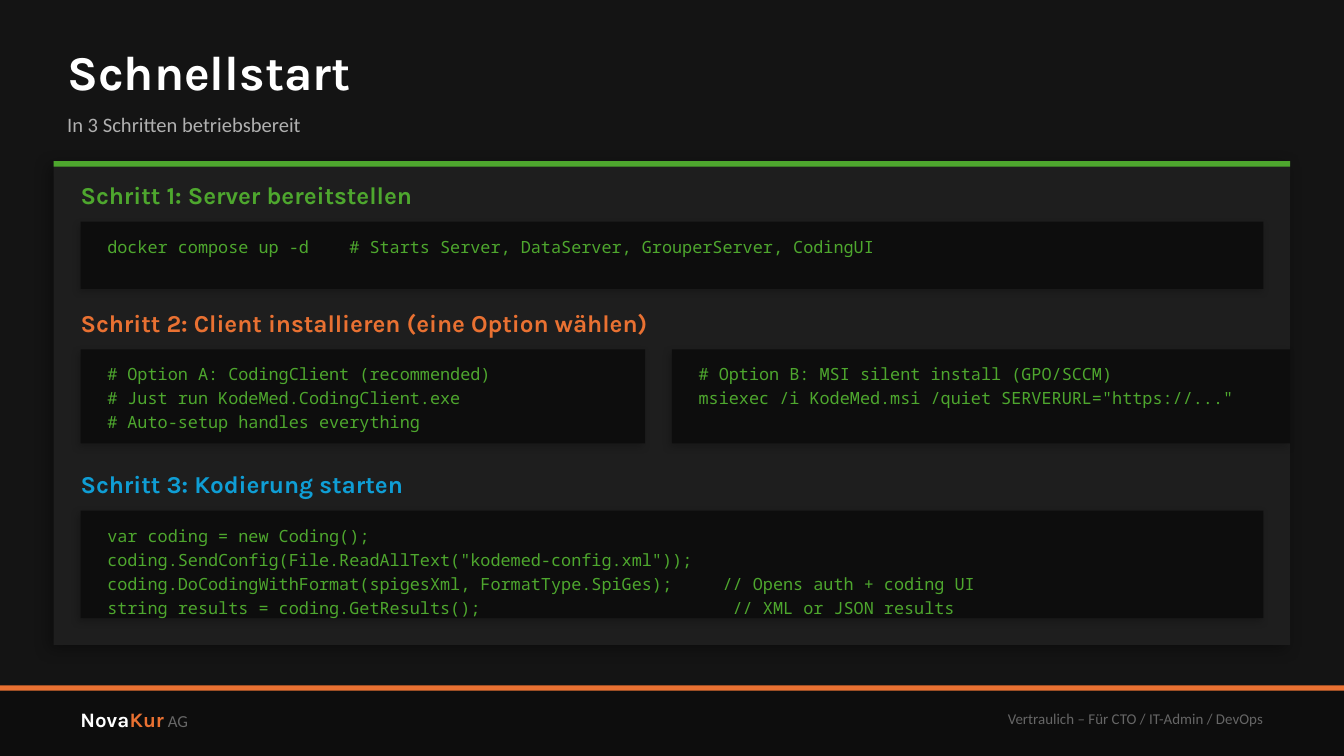
from lxml import etree
from pptx import Presentation
from pptx.dml.color import RGBColor
from pptx.enum import shapes, text
from pptx.oxml import ns
from pptx.util import Inches, Pt

BACKGROUND = RGBColor(0x14, 0x14, 0x14)
PANEL = RGBColor(0x1E, 0x1E, 0x1E)
DARK = RGBColor(0x0D, 0x0D, 0x0D)
WHITE = RGBColor(0xFF, 0xFF, 0xFF)
LIGHT_GRAY = RGBColor(0xB0, 0xB0, 0xB0)
GRAY = RGBColor(0x66, 0x66, 0x66)
BLACK = RGBColor(0x00, 0x00, 0x00)
GREEN = RGBColor(0x4E, 0xA7, 0x2E)
ORANGE = RGBColor(0xE9, 0x71, 0x32)
BLUE = RGBColor(0x0F, 0x9E, 0xD5)

HEADING_FONT = "Karla"
BODY_FONT = "Calibri"
CODE_FONT = "Noto Sans Mono"

STEPS = [
    (0.1, "Schritt 1: Server bereitstellen", GREEN, 0.5, [
        (0, 8.8, ["docker compose up -d    # Starts Server, DataServer, GrouperServer, CodingUI"]),
    ]),
    (1.05, "Schritt 2: Client installieren (eine Option wählen)", ORANGE, 0.7, [
        (0, 4.2, [
            "# Option A: CodingClient (recommended)",
            "# Just run KodeMed.CodingClient.exe",
            "# Auto-setup handles everything",
        ]),
        (4.4, 4.6, [
            "# Option B: MSI silent install (GPO/SCCM)",
            'msiexec /i KodeMed.msi /quiet SERVERURL="https://..."',
        ]),
    ]),
    (2.25, "Schritt 3: Kodierung starten", BLUE, 0.8, [
        (0, 8.8, [
            "var coding = new Coding();",
            'coding.SendConfig(File.ReadAllText("kodemed-config.xml"));',
            "coding.DoCodingWithFormat(spigesXml, FormatType.SpiGes);     // Opens auth + coding UI",
            "string results = coding.GetResults();                         // XML or JSON results",
        ]),
    ]),
]


def add_shadow(shape, opacity, blur, distance):
    """Give a shape a soft black shadow towards the lower left."""
    effects = shape._element.spPr.find(ns.qn("a:effectLst"))
    shadow = etree.SubElement(
        effects, ns.qn("a:outerShdw"), blurRad=str(Pt(blur)), dist=str(Pt(distance)),
        dir=str(135 * 60000), algn="bl", rotWithShape="0")
    color = etree.SubElement(shadow, ns.qn("a:srgbClr"), val=str(BLACK))
    etree.SubElement(color, ns.qn("a:alpha"), val=str(opacity * 1000))


def add_box(slide, left, top, width, height, color):
    """Add a plain filled rectangle."""
    shape = slide.shapes.add_shape(
        shapes.MSO_SHAPE.RECTANGLE, Inches(left), Inches(top), Inches(width), Inches(height))
    shape.shadow.inherit = False
    shape.fill.solid()
    shape.fill.fore_color.rgb = color
    shape.line.fill.background()
    return shape


def add_text(slide, left, top, width, height, lines, *, size=11, font=BODY_FONT,
             color=WHITE, bold=False, align=text.PP_ALIGN.LEFT,
             anchor=text.MSO_ANCHOR.MIDDLE, inset=True, space_after=0):
    """Add a text box and return its paragraphs."""
    box = slide.shapes.add_textbox(Inches(left), Inches(top), Inches(width), Inches(height))
    frame = box.text_frame
    frame.word_wrap = True
    frame.vertical_anchor = anchor
    if not inset:
        frame.margin_left = frame.margin_right = frame.margin_top = frame.margin_bottom = 0
    frame.text = "\n".join(lines)
    for paragraph in frame.paragraphs:
        paragraph.alignment = align
        paragraph.space_after = Pt(space_after)
        for run in paragraph.runs:
            format_run(run, size, font, color, bold)
    return frame.paragraphs


def format_run(run, size, font, color, bold):
    """Set the typeface, size and colour of a run."""
    run.font.size = Pt(size)
    run.font.name = font
    run.font.color.rgb = color
    run.font.bold = bold


def add_footer(slide, left, top, width, height):
    """Add the footer band with the company name and the audience."""
    add_box(slide, left, top, width, height, DARK)
    add_box(slide, left, top, width, 0.04, ORANGE)
    name = add_text(slide, left + 0.5, top + 0.05, 3, 0.4, ["Nova"],
                    font=HEADING_FONT, bold=True)[0]
    for part, size, font, color, bold in [
        ("Kur", 11, HEADING_FONT, ORANGE, True),
        (" AG", 9, BODY_FONT, GRAY, False),
    ]:
        run = name.add_run()
        run.text = part
        format_run(run, size, font, color, bold)
    add_text(slide, left + width - 4.5, top + 0.05, 4, 0.4,
             ["Vertraulich – Für CTO / IT-Admin / DevOps"],
             size=8, color=GRAY, align=text.PP_ALIGN.RIGHT)


def add_header(slide, left, top, width):
    """Add the title and the subtitle."""
    add_text(slide, left, top, width, 0.55, ["Schnellstart"],
             size=26, font=HEADING_FONT, bold=True, inset=False)
    add_text(slide, left, top + 0.5, width, 0.35, ["In 3 Schritten betriebsbereit"],
             color=LIGHT_GRAY, inset=False)


def add_code(slide, left, top, width, height, lines):
    """Add a dark code block."""
    add_shadow(add_box(slide, left, top, width, height, DARK), 20, 4, 2)
    add_text(slide, left + 0.1, top + 0.06, width - 0.2, height - 0.12, lines,
             size=9, font=CODE_FONT, color=GREEN, anchor=text.MSO_ANCHOR.TOP, space_after=2)


def add_steps(slide, left, top, width, height):
    """Add the panel with the three steps and their code."""
    add_shadow(add_box(slide, left, top, width, height, PANEL), 35, 8, 3)
    add_box(slide, left, top, width, 0.04, GREEN)
    for offset, heading, color, code_height, blocks in STEPS:
        add_text(slide, left + 0.2, top + offset, width - 0.4, 0.3, [heading],
                 size=13, font=HEADING_FONT, color=color, bold=True, inset=False)
        for code_left, code_width, lines in blocks:
            add_code(slide, left + 0.2 + code_left, top + offset + 0.35,
                     code_width, code_height, lines)


def main():
    """Build the quick start slide."""
    presentation = Presentation()
    presentation.slide_width = Inches(10)
    presentation.slide_height = Inches(10) * 9 // 16
    slide = presentation.slides.add_slide(presentation.slide_layouts[6])
    slide.background.fill.solid()
    slide.background.fill.fore_color.rgb = BACKGROUND
    add_footer(slide, 0, 5.1, 10, 0.53)
    add_header(slide, 0.5, 0.25, 9)
    add_steps(slide, 0.4, 1.2, 9.2, 3.6)
    presentation.save("out.pptx")


if __name__ == "__main__":
    main()
